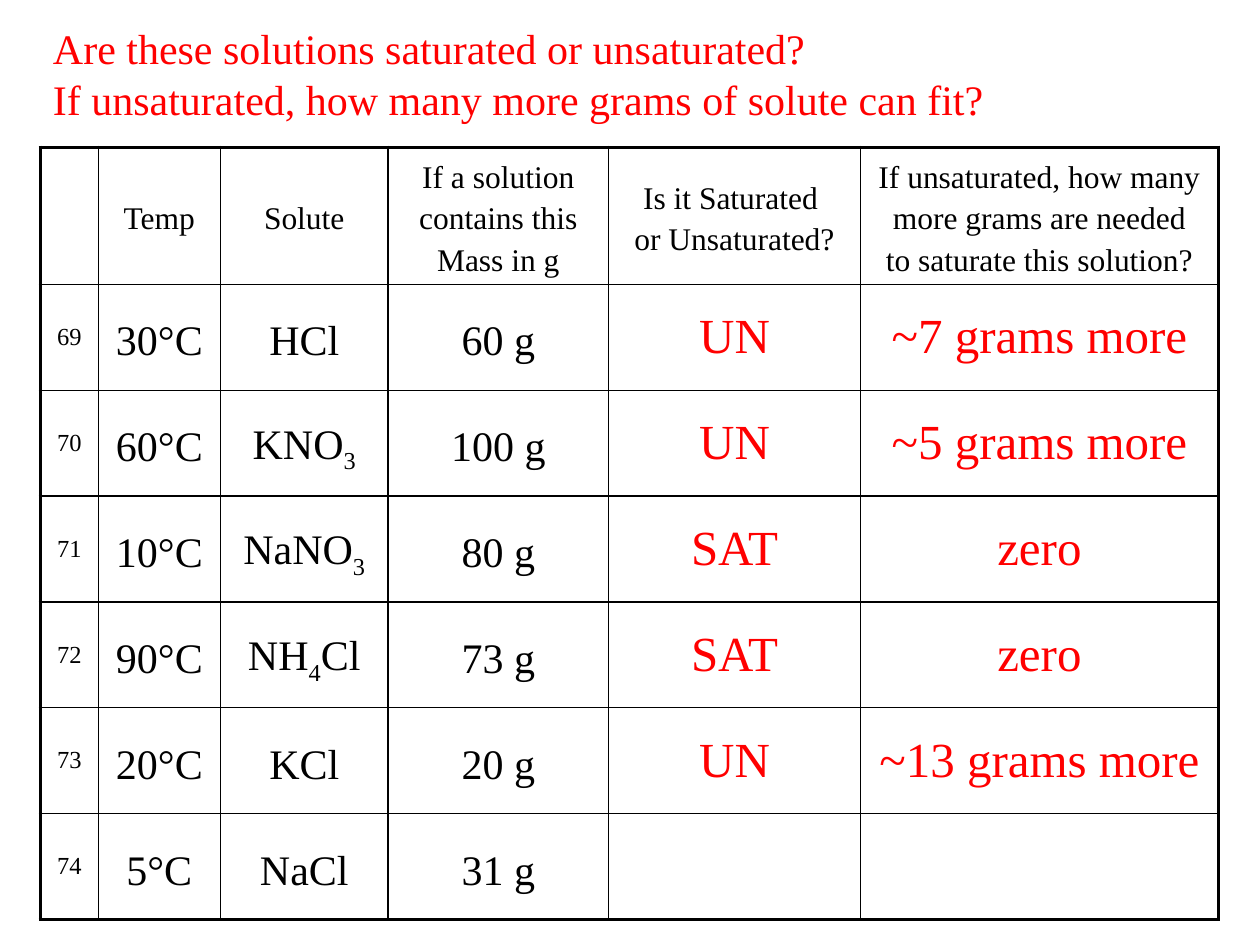
from lxml import etree
from pptx import Presentation
from pptx.dml.color import RGBColor
from pptx.enum.text import MSO_ANCHOR, MSO_AUTO_SIZE, PP_ALIGN
from pptx.oxml.ns import qn
from pptx.util import Inches, Pt

LEFT, CENTER = PP_ALIGN.LEFT, PP_ALIGN.CENTER
TOP, MIDDLE = MSO_ANCHOR.TOP, MSO_ANCHOR.MIDDLE
NO_FIT = MSO_AUTO_SIZE.NONE
BLACK = RGBColor(0, 0, 0)
RED = RGBColor(255, 0, 0)
FONT = "Times New Roman"

TITLE = ("Are these solutions saturated or unsaturated?\v"
         "If unsaturated, how many more grams of solute can fit?")
HEADERS = ["", "Temp", "Solute", "If a solution contains this Mass in g",
           "Is it Saturated \vor Unsaturated?",
           "If unsaturated, how many more grams are needed\vto saturate this solution?"]
SOLUTIONS = [
    ["69", "30°C", "HCl", "60 g", "UN", "~7 grams more"],
    ["70", "60°C", "KNO_3", "100 g", "UN", "~5 grams more"],
    ["71", "10°C", "NaNO_3", "80 g", "SAT", "zero"],
    ["72", "90°C", "NH_4_Cl", "73 g", "SAT", "zero"],
    ["73", "20°C", "KCl", "20 g", "UN", "~13 grams more"],
    ["74", "5°C", "NaCl", "31 g", "", ""],
]
COL_WIDTHS = [0.46, 0.97, 1.33, 1.75, 2, 2.84]
HEADER_HEIGHT, ROW_HEIGHT = 0.92, 0.84
THIN, THICK = 1, 2.25

SPACED = {"line_spacing": 1.19, "space_before": Pt(4.8), "space_after": Pt(6)}
HEADER = ({"size": Pt(18), "color": BLACK}, SPACED)
NUMBER = ({"size": Pt(14), "color": BLACK}, {})
GIVEN = ({"size": Pt(24), "color": BLACK}, SPACED)
ANSWER = ({"size": Pt(28), "color": RED}, {})
COL_STYLES = [NUMBER, GIVEN, GIVEN, GIVEN, ANSWER, ANSWER]


def format_run(r, size, color):
    r.font.name = FONT
    r.font.size = size
    r.font.color.rgb = color


def write(p, text, align, font, spacing):
    p.alignment = align
    for name, value in spacing.items():
        setattr(p, name, value)
    for i, part in enumerate(text.split("_")):
        for j, line in enumerate(part.split("\v")):
            if j:
                p.add_line_break()
            r = p.add_run()
            r.text = line
            format_run(r, **font)
            if i % 2:
                r.font._element.set("baseline", "-25000")


def add_border(cell, side, width):
    ln = etree.SubElement(cell._tc.get_or_add_tcPr(), qn("a:ln" + side), w=str(Pt(width)))
    fill = etree.SubElement(ln, qn("a:solidFill"))
    etree.SubElement(fill, qn("a:srgbClr"), val=str(BLACK))


def add_title(s):
    sp = s.shapes.title
    sp.left, sp.top, sp.width, sp.height = map(Inches, (0.32, 0.13, 9.5, 1.31))
    tf = sp.text_frame
    tf.word_wrap, tf.auto_size, tf.vertical_anchor = True, NO_FIT, TOP
    write(tf.paragraphs[0], TITLE, LEFT, {"size": Pt(24), "color": RED}, {})


def add_solution_table(s):
    rows = [HEADERS] + SOLUTIONS
    last_row, last_col = len(rows) - 1, len(HEADERS) - 1
    frame = s.shapes.add_table(len(rows), len(HEADERS), Inches(0.32), Inches(1.17),
                               Inches(9.34), Inches(6.18))
    table = frame.table
    table.first_row = table.horz_banding = False
    for col, width in zip(table.columns, COL_WIDTHS):
        col.width = Inches(width)
    for i, texts in enumerate(rows):
        table.rows[i].height = Inches(ROW_HEIGHT if i else HEADER_HEIGHT)
        for j, text in enumerate(texts):
            cell = table.cell(i, j)
            cell.vertical_anchor = MIDDLE
            outer = {"L": j == 0, "R": j == last_col, "T": i == 0, "B": i == last_row}
            for side, is_outer in outer.items():
                add_border(cell, side, THICK if is_outer else THIN)
            cell.fill.background()
            if text:
                font, spacing = COL_STYLES[j] if i else HEADER
                write(cell.text_frame.paragraphs[0], text, CENTER, font, spacing)


def main():
    """Build the solution saturation quiz slide."""
    prs = Presentation()
    prs.slide_width, prs.slide_height = Inches(10), Inches(7.5)
    s = prs.slides.add_slide(prs.slide_layouts[5])
    add_title(s)
    add_solution_table(s)
    prs.save("out.pptx")


if __name__ == "__main__":
    main()
